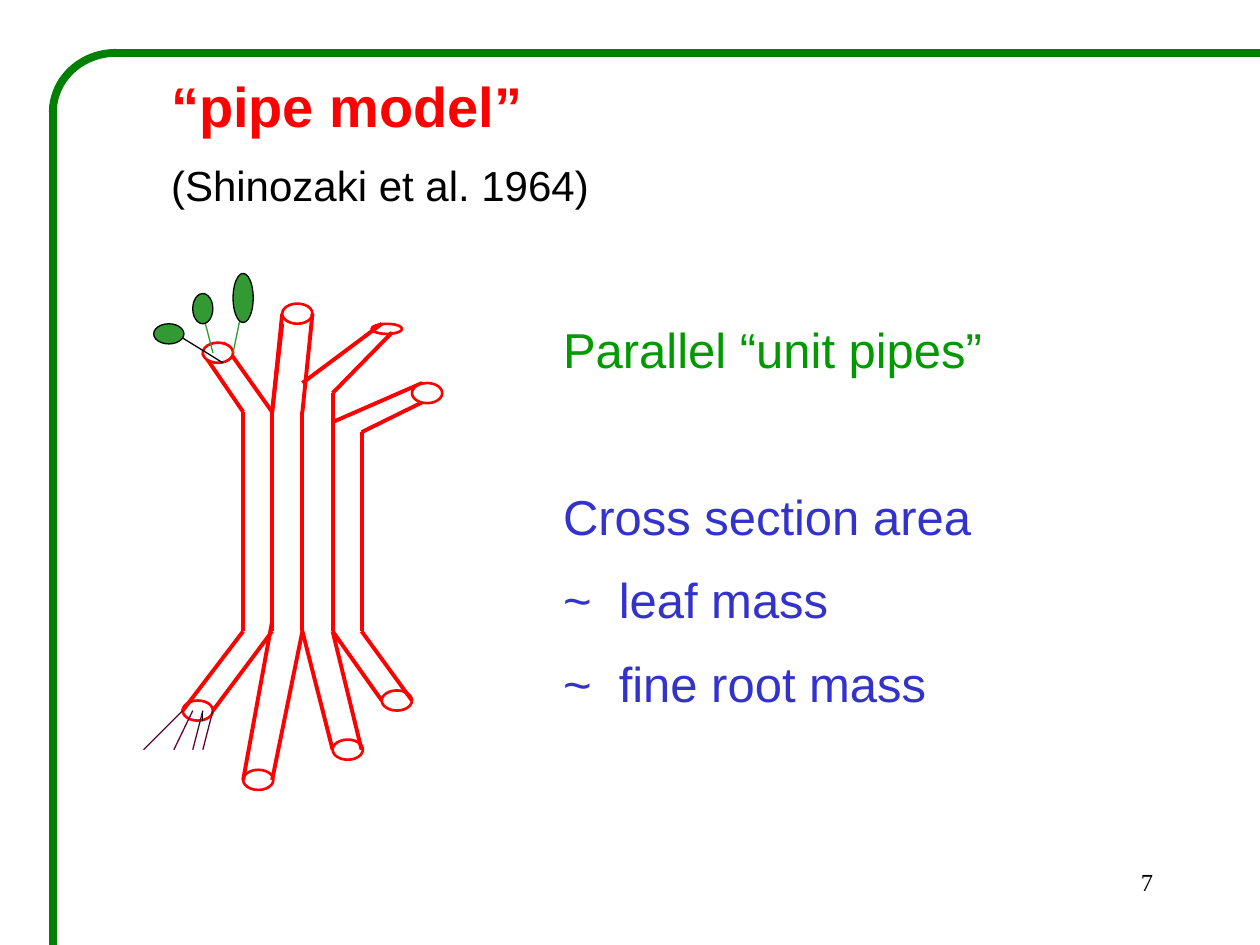
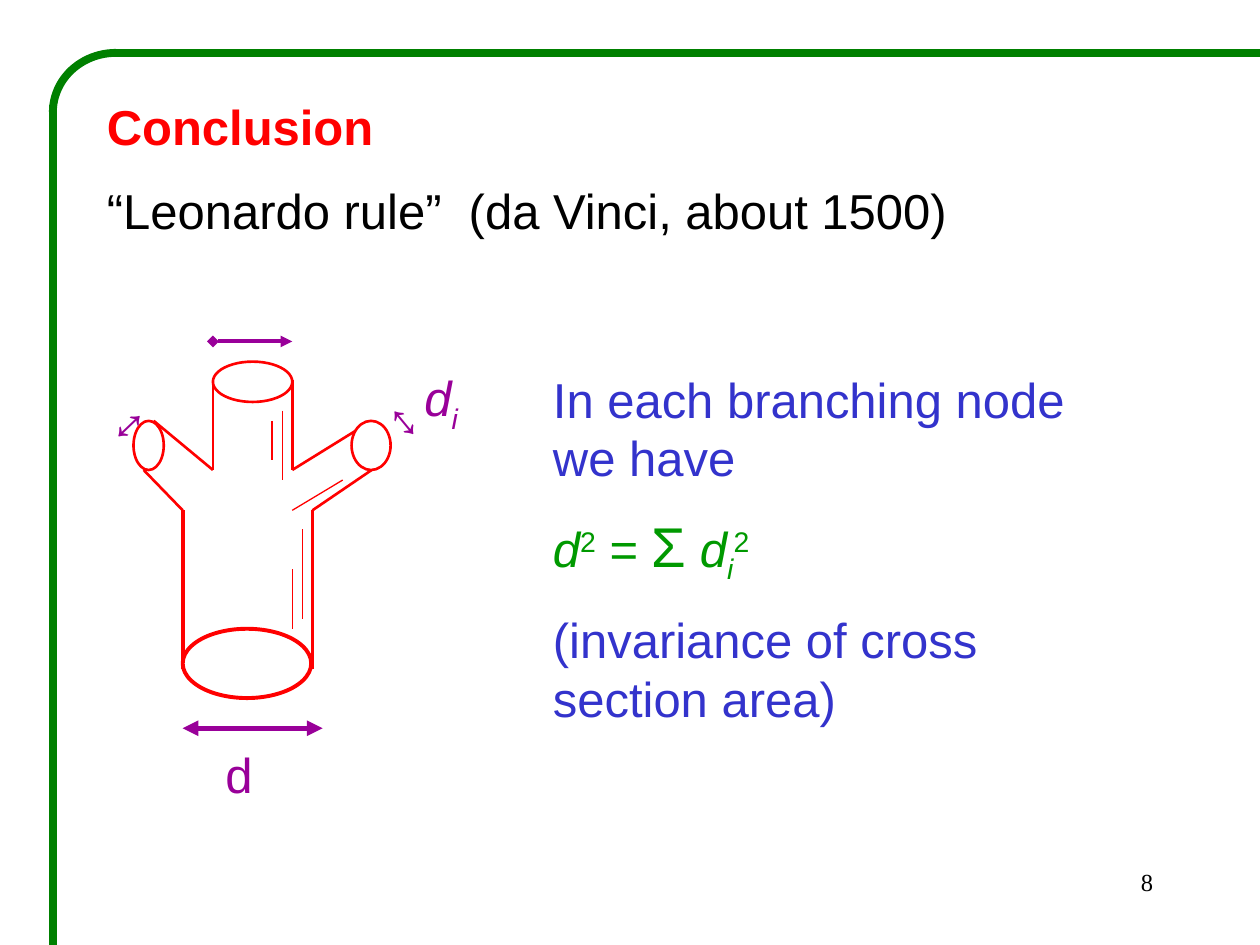
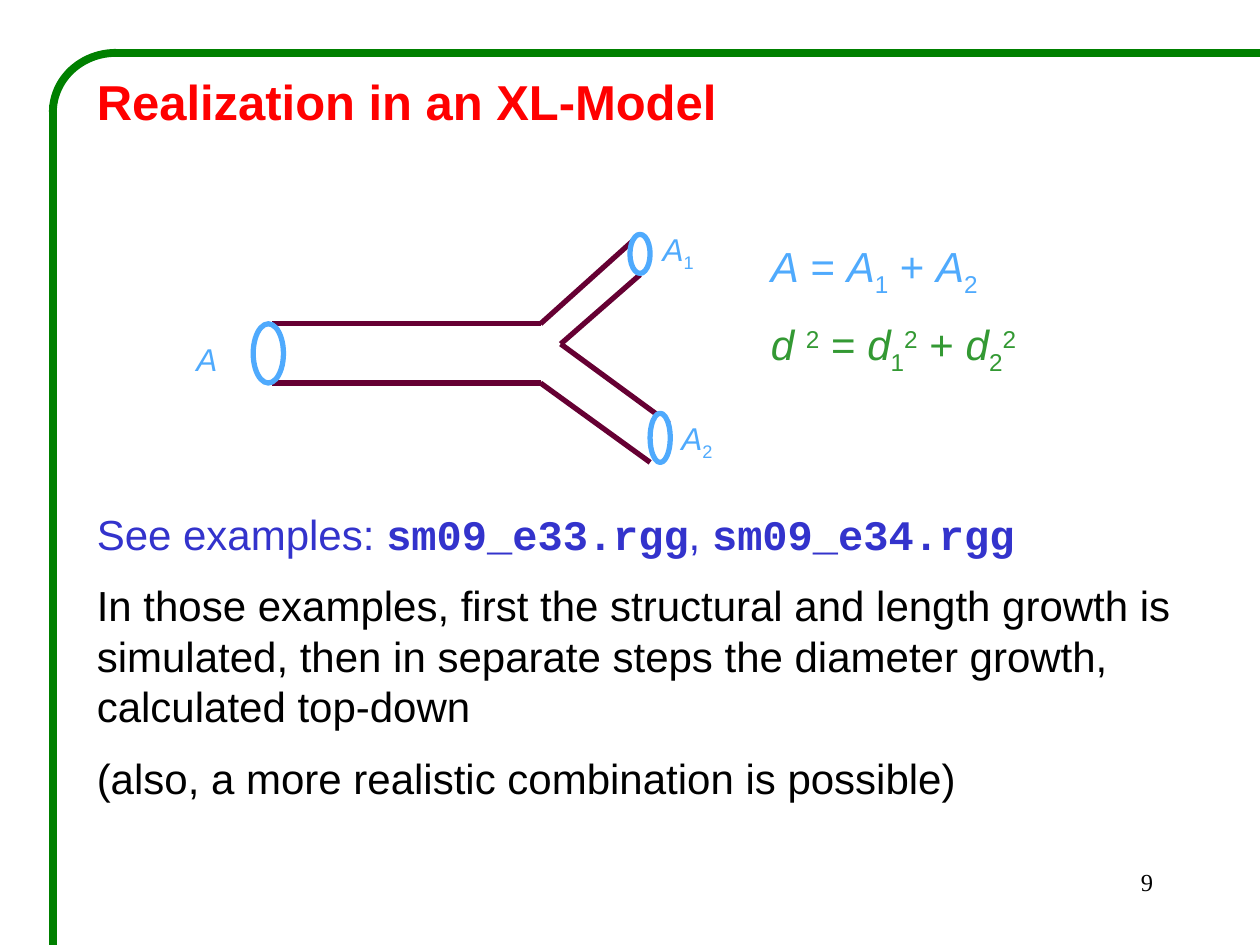
import pptx
import pptx.dml.color
import pptx.enum.shapes
import pptx.enum.text
import pptx.oxml.ns
import pptx.util
from lxml import etree
from pptx.util import Inches

Pt = pptx.util.Pt
SHAPES = pptx.enum.shapes.MSO_SHAPE
qn = pptx.oxml.ns.qn

THEME = {
    "colours": {
        "title": "FF0000", "body": "000000", "accent": "3333CC",
        "formula": "009900", "diameter": "990099", "area": "4FAAFD",
        "leaf": "339933", "wood": "660033", "frame": "008000", "paper": "FFFFFF",
    },
    "sizes": {"headline": 32, "large": 28, "medium": 24, "label": 18, "page": 14},
    "font": "Arial",
    "page font": "Times New Roman",
    "gap": 0.5,  # space before a paragraph, as a share of its type size
}

# Run formats, combined by name: "italic sub" is an italic subscript.
FORMATS = {
    "bold": {"bold": True},
    "italic": {"italic": True},
    "code": {"name": "Courier New", "bold": True},
    "big": {"size": Pt(THEME["sizes"]["headline"])},
    "page": {"name": THEME["page font"]},
}
BASELINES = {"sub": "-25000", "sup": "30000"}

# Drawing styles; those with a fill are ellipses, the others lines.
STROKES = {
    "pipe": {"colour": "title", "width": 2.25},
    "pipe end": {"colour": "title", "width": 1.5, "fill": "paper"},
    "trunk end": {"colour": "title", "width": 2.25, "fill": "paper"},
    "branch": {"colour": "title", "width": 1.5},
    "shading": {"colour": "title", "width": 0.75},
    "root": {"colour": "wood", "width": 0.75},
    "stalk": {"colour": "leaf", "width": 0.75},
    "twig": {"colour": "body", "width": 0.75},
    "leaf": {"colour": "body", "width": 0.75, "fill": "leaf"},
    "trunk diameter": {"colour": "diameter", "width": 3,
                       "headEnd": "triangle", "tailEnd": "triangle"},
    "branch diameter": {"colour": "diameter", "width": 2.25,
                        "headEnd": "diamond", "tailEnd": "triangle"},
    "stem": {"colour": "wood", "width": 3},
    "section": {"colour": "area", "width": 3, "fill": "paper"},
    "frame": {"colour": "frame", "width": 4.5},
}

FRAME_EDGE = 0.42
FRAME_LINES = [(10, FRAME_EDGE, 0.92, FRAME_EDGE), (FRAME_EDGE, 0.83, FRAME_EDGE, 7.5)]
FRAME_CORNER = (FRAME_EDGE, FRAME_EDGE, 1, 0.94)
PAGE_NUMBER_BOX = (7.17, 6.83, 2.08, 0.5)
FIRST_PAGE = 7

TRUNK_TOPS = [(1.93, 3.27), (2.16, 3.27), (2.4, 3.27), (2.64, 3.12), (2.87, 3.43)]
TRUNK_FOOT = 5.01
END_SIZE = (0.24, 0.16)


def pipe_ends(*corners):
    return [corner + END_SIZE for corner in corners]


# Lines are x1, y1, x2, y2; ellipses are left, top, width, height.
PIPE_TREE = [
    ("pipe", [(x, top, x, TRUNK_FOOT) for x, top in TRUNK_TOPS]
     + [(1.61, 2.8, 1.93, 3.27), (1.77, 2.72, 2.16, 3.27)]),
    ("pipe end", pipe_ends((1.61, 2.72))),
    ("pipe", [(2.16, 3.27, 2.24, 2.49), (2.64, 5.95, 2.4, TRUNK_FOOT)]),
    ("pipe end", pipe_ends((2.24, 2.41)) + [(2.95, 2.57, 0.24, 0.08)]),
    ("pipe", [(2.16, 3.27, 2.24, 2.57), (2.4, 3.04, 3.03, 2.57),
              (2.64, 3.12, 3.11, 2.64), (2.64, 3.35, 3.35, 3.04),
              (2.87, 3.43, 3.5, 3.12)]),
    ("pipe end", pipe_ends((1.93, 6.11), (3.27, 3.04), (2.64, 5.87),
                           (1.45, 5.56), (3.03, 5.48))),
    ("pipe", [(1.69, 5.64, 2.16, TRUNK_FOOT), (1.45, 5.64, 1.93, TRUNK_FOOT),
              (2.16, 6.19, 2.4, TRUNK_FOOT), (1.93, 6.19, 2.16, 4.93),
              (2.87, 5.95, 2.64, TRUNK_FOOT), (2.4, 3.27, 2.48, 2.49),
              (3.27, 5.56, 2.87, TRUNK_FOOT), (3.03, 5.56, 2.64, TRUNK_FOOT)]),
    ("root", [(1.53, 5.64, 1.38, 5.95), (1.61, 5.64, 1.53, 5.95),
              (1.45, 5.64, 1.14, 5.95), (1.69, 5.64, 1.61, 5.95)]),
    ("twig", [(1.61, 5.64, 1.61, 5.72)]),
    ("stalk", [(1.69, 2.8, 1.61, 2.49), (1.85, 2.8, 1.93, 2.41)]),
    ("twig", [(1.38, 2.64, 1.77, 2.88)]),
    ("leaf", [(1.53, 2.33, 0.16, 0.24), (1.85, 2.17, 0.16, 0.39),
              (1.22, 2.57, 0.24, 0.16)]),
]

BRANCHING_NODE = [
    ("pipe", [(x, 4.05, x, 5.31) for x in (1.45, 2.48)]),
    ("trunk end", [(1.45, 4.99, 1.02, 0.55)]),
    ("branch", [(2.48, 4.05, 2.95, 3.73), (2.32, 3.73, 2.95, 3.34),
                (1.45, 4.05, 1.14, 3.73), (1.22, 3.34, 1.69, 3.73)]
     + [(x, 3.73, x, 3.02) for x in (1.69, 2.32)]),
    ("pipe end", [(2.79, 3.34, 0.31, 0.39), (1.06, 3.34, 0.24, 0.39),
                  (1.69, 2.87, 0.63, 0.32)]),
    ("shading", [(2.4, 4.2, 2.4, 4.91), (2.32, 4.52, 2.32, 4.99),
                 (2.32, 4.05, 2.72, 3.81), (2.16, 3.34, 2.16, 3.65),
                 (2.24, 3.26, 2.24, 3.81)]),
    ("trunk diameter", [(1.45, 5.78, 2.56, 5.78)]),
    ("branch diameter", [(1.69, 2.71, 2.32, 2.71)]),
]

FORKED_STEM = [
    ("stem", [(2.16, y, 4.29, y) for y in (3.04, 2.57)]),
    ("section", [(2.01, 2.57, 0.24, 0.47)]),
    ("stem", [(4.29, 2.57, 5.08, 1.86), (4.45, 2.73, 5.08, 2.18),
              (4.29, 3.04, 5.16, 3.67), (4.45, 2.73, 5.31, 3.36)]),
    ("section", [(5.16, 3.28, 0.16, 0.39), (5, 1.86, 0.16, 0.31)]),
]


def para(size, colour, *runs, skipped_lines=0):
    """A run is a string or (text, formats); skipped_lines widens the gap above."""
    return {"size": size, "colour": colour, "runs": runs, "skipped": skipped_lines}


SLIDES = [
    {"drawing": PIPE_TREE, "texts": [
        {"box": (1.26, 0.52, 5.43, 1.24), "paras": [
            para("headline", "title", ("“pipe model”", "bold")),
            para("medium", "body", "(Shinozaki et al. 1964)")]},
        {"box": (4.37, 2.49, 3.78, 3.4), "paras": [
            para("large", "formula", "Parallel “unit pipes”"),
            para("large", "accent", "Cross section area", skipped_lines=1),
            para("large", "accent", "~  leaf mass"),
            para("large", "accent", "~  fine root mass")]},
    ]},
    {"drawing": BRANCHING_NODE, "texts": [
        {"box": (0.75, 0.72, 7.09, 1.28), "paras": [
            para("large", "title", ("Conclusion", "bold")),
            para("large", "body", "“Leonardo rule”  (da Vinci, about 1500)")]},
        {"box": (1.69, 5.86, 0.55, 0.57), "paras": [para("large", "diameter", "d")]},
        {"box": (2.95, 3.1, 0.79, 0.57), "turn": 50.6,
         "paras": [para("large", "diameter", "↔")]},
        {"box": (3.27, 2.87, 0.95, 0.57), "paras": [
            para("large", "diameter", ("d", "italic"), ("i", "italic sub"))]},
        {"box": (0.67, 3.02, 0.63, 0.57), "turn": 316.1,
         "paras": [para("large", "diameter", "↔")]},
        {"box": (4.29, 2.88, 4.41, 3.03), "paras": [
            para("large", "accent", "In each branching node we have"),
            para("large", "formula", ("d", "italic"), ("2", "sup"), " = ", ("Σ", "big"),
                 " ", ("d", "italic"), ("i", "italic sub"), ("2", "sup")),
            para("large", "accent", "(invariance of cross section area)")]},
    ]},
    {"drawing": FORKED_STEM, "texts": [
        {"box": (6.02, 1.86, 2.36, 1.11), "paras": [
            para("medium", "area", ("A", "italic"), " = ", ("A", "italic"), ("1", "sub"),
                 " + ", ("A", "italic"), ("2", "sub")),
            para("medium", "leaf", ("d ", "italic"), ("2", "sup"), " = ",
                 ("d", "italic"), ("1", "sub"), ("2", "sup"), " + ",
                 ("d", "italic"), ("2", "sub"), ("2", "sup"))]},
        {"box": (1.46, 2.65, 0.39, 0.4), "paras": [
            para("label", "area", ("A", "italic"))]},
        {"box": (5.16, 1.78, 0.55, 0.4), "paras": [
            para("label", "area", ("A", "italic"), ("1", "sub"))]},
        {"box": (5.31, 3.28, 0.55, 0.4), "paras": [
            para("label", "area", ("A", "italic"), ("2", "sub"))]},
        {"box": (0.67, 0.52, 8.9, 6.3), "paras": [
            para("large", "title", ("Realization in an XL-Model", "bold")),
            para("medium", "accent", "See examples: ", ("sm09_e33.rgg", "code"), ", ",
                 ("sm09_e34.rgg", "code"), skipped_lines=5),
            para("medium", "body", "In those examples, first the structural and length "
                 "growth is simulated, then in separate steps the diameter growth, "
                 "calculated top-down"),
            para("medium", "body", "(also, a more realistic combination is possible)")]},
    ]},
]


def colour(name):
    return pptx.dml.color.RGBColor.from_string(THEME["colours"][name])


def inches(values):
    return [Inches(value) for value in values]


def apply_stroke(line, stroke):
    line.color.rgb = colour(stroke["colour"])
    line.width = Pt(stroke["width"])


def draw_line(slide, ends, stroke):
    connector = slide.shapes.add_connector(
        pptx.enum.shapes.MSO_CONNECTOR.STRAIGHT, *inches(ends))
    apply_stroke(connector.line, stroke)
    properties = connector._element.spPr
    etree.SubElement(properties, qn("a:effectLst"))
    for end in ("headEnd", "tailEnd"):
        if end in stroke:
            etree.SubElement(properties.find(qn("a:ln")), qn("a:" + end), type=stroke[end])


def draw_shape(slide, preset, box, stroke):
    shape = slide.shapes.add_shape(preset, *inches(box))
    shape.shadow.inherit = False
    apply_stroke(shape.line, stroke)
    if "fill" in stroke:
        shape.fill.solid()
        shape.fill.fore_color.rgb = colour(stroke["fill"])
    else:
        shape.fill.background()
    return shape


def draw_scene(slide, drawing):
    for style, parts in drawing:
        stroke = STROKES[style]
        for part in parts:
            if "fill" in stroke:
                draw_shape(slide, SHAPES.OVAL, part, stroke)
            else:
                draw_line(slide, part, stroke)


def write_run(paragraph, run, size, colour_name):
    text, formats = (run, "") if isinstance(run, str) else run
    piece = paragraph.add_run()
    piece.text = text
    piece.font.color.rgb = colour(colour_name)
    values = {"name": THEME["font"], "size": Pt(size)}
    for key in formats.split():
        values.update(FORMATS.get(key, {}))
        if key in BASELINES:
            piece.font._element.set("baseline", BASELINES[key])
    for attribute, value in values.items():
        setattr(piece.font, attribute, value)


def write_text(slide, box, paras, turn=0):
    holder = slide.shapes.add_textbox(*inches(box))
    holder.rotation = turn
    frame = holder.text_frame
    frame.word_wrap = True
    frame.auto_size = pptx.enum.text.MSO_AUTO_SIZE.SHAPE_TO_FIT_TEXT
    for index, content in enumerate(paras):
        paragraph = frame.add_paragraph() if index else frame.paragraphs[0]
        size = THEME["sizes"][content["size"]]
        if index:
            skipped = content["skipped"]
            line_height = 1.2
            paragraph.space_before = Pt(
                size * (THEME["gap"] * (skipped + 1) + line_height * skipped))
        for run in content["runs"]:
            write_run(paragraph, run, size, content["colour"])
    return frame


def add_frame(slide, page):
    for ends in FRAME_LINES:
        draw_line(slide, ends, STROKES["frame"])
    corner = draw_shape(slide, SHAPES.ARC, FRAME_CORNER, STROKES["frame"])
    for index, degrees in enumerate((180, 270)):
        corner.adjustments[index] = degrees * 0.6
    number = write_text(slide, PAGE_NUMBER_BOX, [para("page", "body", (str(page), "page"))])
    number.auto_size = pptx.enum.text.MSO_AUTO_SIZE.NONE
    number.paragraphs[0].alignment = pptx.enum.text.PP_ALIGN.RIGHT


def main():
    deck = pptx.Presentation()
    deck.slide_width, deck.slide_height = inches((10, 7.5))
    blank = deck.slide_layouts[6]
    for page, content in enumerate(SLIDES, FIRST_PAGE):
        slide = deck.slides.add_slide(blank)
        draw_scene(slide, content["drawing"])
        for text in content["texts"]:
            write_text(slide, **{key: text[key] for key in text if key != "turn"},
                       turn=text.get("turn", 0))
        add_frame(slide, page)
    deck.save("out.pptx")


if __name__ == "__main__":
    main()
